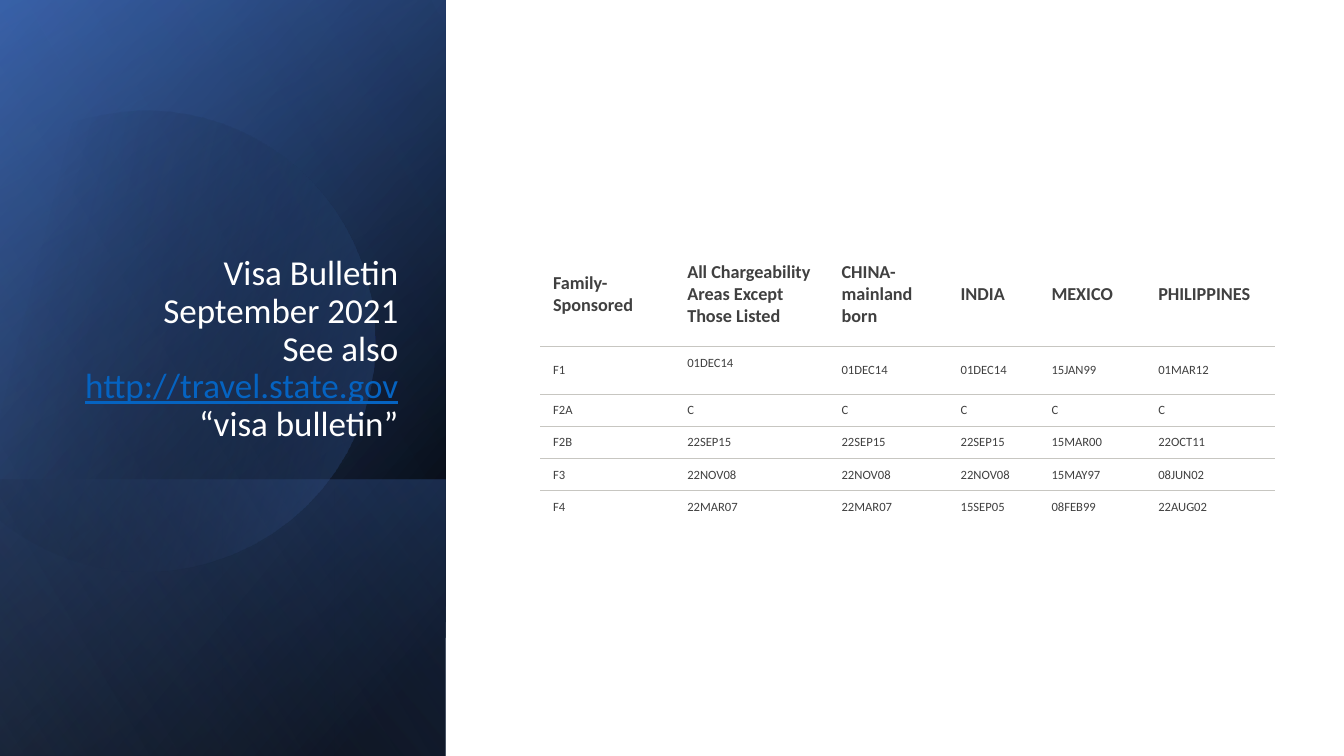
import math

import lxml.etree
import pptx
import pptx.dml.color
import pptx.enum.shapes
import pptx.enum.text
import pptx.oxml.ns
import pptx.util

Cm = pptx.util.Cm
RGBColor = pptx.dml.color.RGBColor
qn = pptx.oxml.ns.qn

BLACK = RGBColor(0x00, 0x00, 0x00)
WHITE = RGBColor(0xFF, 0xFF, 0xFF)
DEEP_BLUE = RGBColor(0x2F, 0x55, 0x97)
BLUE = RGBColor(0x44, 0x72, 0xC4)
PALE_BLUE = RGBColor(0x8F, 0xAA, 0xDC)
LINK_BLUE = RGBColor(0x05, 0x63, 0xC1)
TABLE_TEXT = RGBColor(0x40, 0x40, 0x40)
RULE_GREY = RGBColor(0xC7, 0xC6, 0xC1)

FONT = "Calibri"
PANEL_BOX = (-3.91, 3.91, 19.05, 11.23)
LOWER_BOX = (2.13, 9.96, 6.96, 11.23)

DISC_CENTER = (4.03, 8.5)
DISC_ROTATION = 343.9
DISC_START = (3.78, 2.79)
DISC_SEGMENTS = [
    [(6.25, 2.84), (8.51, 4.5), (9.22, 6.99)],
    [(10.11, 10.08), (8.33, 13.28), (5.26, 14.17)],
    [(3.33, 14.73), (1.35, 14.25), (-0.08, 13.06)],
    [(-0.38, 12.78)],
    [(-0.38, 4.45)],
    [(0, 4.09)],
    [(0.58, 3.61), (1.27, 3.25), (2.03, 3.02)],
    [(2.62, 2.87), (3.2, 2.79), (3.78, 2.79)],
]
CURVE_STEPS = 16

COLUMN_WIDTHS = [3.38, 3.89, 3.0, 2.29, 2.69, 3.28]
ROW_HEIGHTS = [2.62, 1.22, 0.81, 0.81, 0.81, 0.81]
VISA_ROWS = [
    ["Family-\vSponsored", "All Chargeability\vAreas Except\vThose Listed",
     "CHINA-mainland\vborn", "INDIA", "MEXICO", "PHILIPPINES"],
    ["F1", "01DEC14", "01DEC14", "01DEC14", "15JAN99", "01MAR12"],
    ["F2A", "C", "C", "C", "C", "C"],
    ["F2B", "22SEP15", "22SEP15", "22SEP15", "15MAR00", "22OCT11"],
    ["F3", "22NOV08", "22NOV08", "22NOV08", "15MAY97", "08JUN02"],
    ["F4", "22MAR07", "22MAR07", "15SEP05", "08FEB99", "22AUG02"],
]


def style_gradient(shape, stops, angle):
    shape.shadow.inherit = False
    shape.line.fill.background()
    shape.fill.gradient()
    shape.fill.gradient_angle = 360 - angle
    for gradient_stop, (position, color, _) in zip(shape.fill.gradient_stops, stops):
        gradient_stop.position = position
        gradient_stop.color.rgb = color
    colors = shape._element.spPr.iter(qn("a:srgbClr"))
    for color_element, (_, _, opacity) in zip(colors, stops):
        if opacity < 100:
            alpha = lxml.etree.SubElement(color_element, qn("a:alpha"))
            alpha.set("val", str(opacity * 1000))


def add_panel(slide, box, stops, angle):
    panel = slide.shapes.add_shape(
        pptx.enum.shapes.MSO_SHAPE.RECTANGLE, *[Cm(length) for length in box])
    panel.rotation = 90
    panel._element.spPr.find(qn("a:xfrm")).set("flipH", "1")
    style_gradient(panel, stops, angle)


def curve_point(controls, t):
    weights = [(1 - t) ** 3, 3 * t * (1 - t) ** 2, 3 * t ** 2 * (1 - t), t ** 3]
    return tuple(sum(w * point[axis] for w, point in zip(weights, controls))
                 for axis in (0, 1))


def disc_outline():
    points = [DISC_START]
    for segment in DISC_SEGMENTS:
        if len(segment) == 1:
            points += segment
        else:
            controls = [points[-1]] + segment
            points += [curve_point(controls, step / CURVE_STEPS)
                       for step in range(1, CURVE_STEPS + 1)]
    return points


def unrotate(point):
    angle = math.radians(360 - DISC_ROTATION)
    center_x, center_y = DISC_CENTER
    x, y = point[0] - center_x, point[1] - center_y
    return (Cm(center_x + x * math.cos(angle) - y * math.sin(angle)),
            Cm(center_y + x * math.sin(angle) + y * math.cos(angle)))


def add_disc(slide, stops, angle):
    start, *others = [unrotate(point) for point in disc_outline()]
    builder = slide.shapes.build_freeform(*start)
    builder.add_line_segments(others, close=True)
    disc = builder.convert_to_shape()
    disc.rotation = DISC_ROTATION
    style_gradient(disc, stops, angle)


def format_run(run, size, color, bold=False):
    run.font.name = FONT
    run.font.size = pptx.util.Pt(size)
    run.font.color.rgb = color
    run.font.bold = bold


def add_title(slide):
    title = slide.shapes.title
    title._element.getparent().append(title._element)
    title.left, title.top, title.width, title.height = (
        Cm(1.63), Cm(4.67), Cm(8.66), Cm(6.65))
    frame = title.text_frame
    frame.word_wrap = True
    frame.auto_size = pptx.enum.text.MSO_AUTO_SIZE.NONE
    frame.vertical_anchor = pptx.enum.text.MSO_ANCHOR.BOTTOM
    paragraph = frame.paragraphs[0]
    paragraph.text = "Visa Bulletin September 2021\vSee also "
    paragraph.alignment = pptx.enum.text.PP_ALIGN.RIGHT
    paragraph.line_spacing = 0.9
    address = paragraph.add_run()
    address.text = "http://travel.state.gov"
    paragraph.add_run().text = " “visa bulletin”"
    for run in paragraph.runs:
        format_run(run, 25, WHITE)
    address.font.color.rgb = LINK_BLUE
    address.font.underline = True


def set_borders(cell, has_top, has_bottom):
    properties = cell._tc.get_or_add_tcPr()
    sides = [("a:lnL", False), ("a:lnR", False), ("a:lnT", has_top), ("a:lnB", has_bottom)]
    for index, (tag, visible) in enumerate(sides):
        border = lxml.etree.Element(qn(tag), w=str(pptx.util.Pt(0.75)))
        if visible:
            fill = lxml.etree.SubElement(border, qn("a:solidFill"))
            lxml.etree.SubElement(fill, qn("a:srgbClr"), val=str(RULE_GREY))
        else:
            lxml.etree.SubElement(border, qn("a:noFill"))
        properties.insert(index, border)


def format_cell(cell, text, is_header):
    cell.text_frame.text = text
    cell.fill.background()
    cell.vertical_anchor = pptx.enum.text.MSO_ANCHOR.MIDDLE
    cell.margin_left, cell.margin_right = Cm(0.33), Cm(0.25)
    cell.margin_top = cell.margin_bottom = Cm(0.18)
    for run in cell.text_frame.paragraphs[0].runs:
        format_run(run, 13 if is_header else 9, TABLE_TEXT, is_header)


def add_visa_table(slide):
    table = slide.shapes.add_table(
        len(VISA_ROWS), len(COLUMN_WIDTHS), Cm(13.61), Cm(6.1),
        Cm(sum(COLUMN_WIDTHS)), Cm(sum(ROW_HEIGHTS))).table
    table.first_row = False
    table.horz_banding = False
    for column, width in zip(table.columns, COLUMN_WIDTHS):
        column.width = Cm(width)
    last = len(VISA_ROWS) - 1
    for row_index, texts in enumerate(VISA_ROWS):
        table.rows[row_index].height = Cm(ROW_HEIGHTS[row_index])
        for column_index, text in enumerate(texts):
            cell = table.cell(row_index, column_index)
            format_cell(cell, text, row_index == 0)
            set_borders(cell, row_index > 0, row_index < last)
    raised_cell = table.cell(1, 1)
    raised_cell.vertical_anchor = pptx.enum.text.MSO_ANCHOR.TOP
    raised_cell.margin_top = Cm(0.23)


def main():
    presentation = pptx.Presentation()
    presentation.slide_width = Cm(33.87)
    presentation.slide_height = Cm(19.05)
    slide = presentation.slides.add_slide(presentation.slide_layouts[5])
    add_panel(slide, PANEL_BOX, [(0.08, BLACK, 100), (1, DEEP_BLUE, 100)], 50)
    add_panel(slide, PANEL_BOX, [(0, BLACK, 0), (0.99, BLUE, 46)], 30)
    add_panel(slide, LOWER_BOX, [(0.02, BLUE, 29), (1, BLACK, 30)], 130)
    add_disc(slide, [(0.29, BLACK, 0), (1, BLUE, 43)], 30)
    add_panel(slide, PANEL_BOX, [(0, BLACK, 0), (0.99, PALE_BLUE, 11)], 120)
    add_title(slide)
    add_visa_table(slide)
    presentation.save("out.pptx")


if __name__ == "__main__":
    main()
